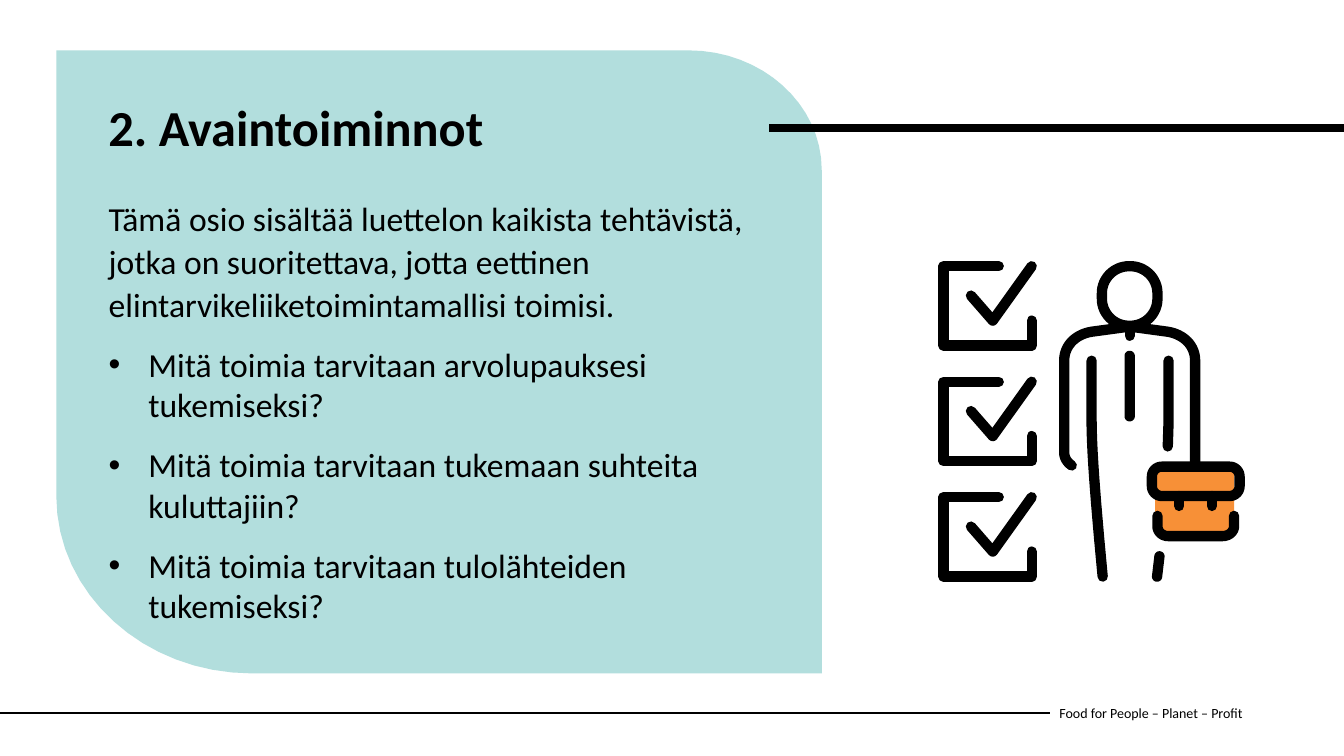
import math

from pptx import Presentation
from pptx.dml.color import RGBColor
from pptx.enum.shapes import MSO_CONNECTOR, MSO_SHAPE
from pptx.enum.text import MSO_ANCHOR, PP_ALIGN
from pptx.oxml.ns import qn
from pptx.util import Cm, Pt
from lxml import etree

BLACK = RGBColor(0x00, 0x00, 0x00)
TEAL = RGBColor(0xB2, 0xDE, 0xDD)
ORANGE = RGBColor(0xF7, 0x90, 0x37)
RECTANGLE = MSO_SHAPE.RECTANGLE
STRAIGHT = MSO_CONNECTOR.STRAIGHT
LEFT = PP_ALIGN.LEFT
TOP = MSO_ANCHOR.TOP
MIDDLE = MSO_ANCHOR.MIDDLE

FONT = "Calibri"
STROKE = 0.26
CURVE_STEPS = 16
CHECK_PITCH = 2.91
BODY_AXIS = 28.47

INTRO = (
    "Tämä osio sisältää luettelon kaikista tehtävistä, jotka on suoritettava, "
    "jotta eettinen elintarvikeliiketoimintamallisi toimisi."
)
QUESTIONS = (
    "Mitä toimia tarvitaan arvolupauksesi tukemiseksi?",
    "Mitä toimia tarvitaan tukemaan suhteita kuluttajiin?",
    "Mitä toimia tarvitaan tulolähteiden tukemiseksi?",
)

CARD = (
    (20.71, 16.97), (6.35, 16.97), (3.63, 16.97, 1.42, 14.96, 1.42, 12.5),
    (1.42, 1.27), (17.35, 1.27), (19.2, 1.27, 20.71, 2.62, 20.71, 4.29),
)
CHECK_MARK = ((24.47, 7.45), (25.02, 8.08), (26, 6.71))
CHECK_BOX = ((26, 8.08), (26, 8.71), (23.78, 8.71), (23.78, 6.71), (25.17, 6.71))
SHOULDER = ((BODY_AXIS, 8.23), (27.51, 8.36), (27.1, 8.43, 26.82, 8.71, 26.82, 9.09))
HAND = ((26.82, 11.4), (26.82, 11.54, 26.9, 11.66, 27.01, 11.73))
LEFT_LEG = ((27.51, 9.09), (27.51, 10.62), (27.51, 11.74, 27.79, 14.5, 27.79, 14.53))
RIGHT_SIDE = ((29.45, 9.09), (29.45, 10.62), (29.43, 11.25))
CASE_BOTTOM = (
    (29.17, 13), (29.17, 13.26), (29.17, 13.4, 29.29, 13.51, 29.44, 13.51),
    (30.81, 13.51), (30.97, 13.51, 31.1, 13.4, 31.1, 13.26), (31.1, 13),
)
TIE_KNOT = ((BODY_AXIS, 8.36), (BODY_AXIS, 8.46))
BUCKLES = (((29.72, 12.5), (29.72, 12.75)), ((30.54, 12.5), (30.54, 12.75)))
SHIRT_FRONT = ((BODY_AXIS, 8.97), (BODY_AXIS, 10.49))
RIGHT_LEG = ((29.22, 14.02), (29.16, 14.53))


def flatten(segments):
    """Turn points and six-number cubic curves into a list of points."""
    points = []
    for segment in segments:
        if len(segment) == 2:
            points.append(segment)
            continue
        corners = [points[-1], segment[:2], segment[2:4], segment[4:]]
        for step in range(1, CURVE_STEPS + 1):
            t = step / CURVE_STEPS
            weights = ((1 - t) ** 3, 3 * t * (1 - t) ** 2, 3 * t * t * (1 - t), t ** 3)
            points.append(tuple(
                sum(weight * corner[axis] for weight, corner in zip(weights, corners))
                for axis in (0, 1)
            ))
    return points


def shift(segments, distance):
    """Move segments down."""
    return [(x, y + distance) for x, y in segments]


def mirror(segments):
    """Reflect segments across the axis of the figure."""
    return [
        tuple(value if index % 2 else 2 * BODY_AXIS - value
              for index, value in enumerate(segment))
        for segment in segments
    ]


def arc(x, y, radius, start):
    """Return the points of a half circle that begins at an angle."""
    angles = [start + math.pi * step / CURVE_STEPS for step in range(CURVE_STEPS + 1)]
    return [(x + radius * math.cos(angle), y + radius * math.sin(angle)) for angle in angles]


def capsule(start, end):
    """Return the outline of a straight stroke with round ends."""
    turn = math.atan2(end[1] - start[1], end[0] - start[0]) + math.pi / 2
    return arc(*start, STROKE / 2, turn) + arc(*end, STROKE / 2, turn + math.pi)


def rounded_loop(left, top, width, height, radius):
    """Return a closed rounded rectangle as segments."""
    right, bottom, bend = left + width, top + height, radius * 0.45
    return [
        (left + radius, top), (right - radius, top),
        (right - bend, top, right, top + bend, right, top + radius),
        (right, bottom - radius),
        (right, bottom - bend, right - bend, bottom, right - radius, bottom),
        (left + radius, bottom),
        (left + bend, bottom, left, bottom - bend, left, bottom - radius),
        (left, top + radius), (left, top + bend, left + bend, top, left + radius, top),
    ]


def draw_line(shape, width, join="round"):
    """Give a shape or connector a black line."""
    shape.line.color.rgb = BLACK
    shape.line.width = width
    line = shape._element.spPr.find(qn("a:ln"))
    line.set("cap", "rnd" if join == "round" else "flat")
    etree.SubElement(line, qn("a:" + join))


def paint(shape, fill=None, width=None, join="round"):
    """Set the fill and the outline."""
    shape.shadow.inherit = False
    if fill is None:
        shape.fill.background()
    else:
        shape.fill.solid()
        shape.fill.fore_color.rgb = fill
    if width is None:
        shape.line.fill.background()
    else:
        draw_line(shape, width, join)


def add_outline(slide, *contours, closed=False, **look):
    """Draw one freeform with a contour for each list of segments."""
    builder = None
    for contour in contours:
        points = [(Cm(x), Cm(y)) for x, y in flatten(contour)]
        if builder is None:
            builder = slide.shapes.build_freeform(*points[0], scale=1.0)
        else:
            builder.move_to(*points[0])
        builder.add_line_segments(points[1:], close=closed)
    paint(builder.convert_to_shape(), **look)


def add_block(slide, box, **look):
    """Draw a rectangle."""
    paint(slide.shapes.add_shape(RECTANGLE, *map(Cm, box)), **look)


def place_text(shape, box, anchor=TOP):
    """Position a text shape and return its frame."""
    shape.left, shape.top, shape.width, shape.height = map(Cm, box)
    frame = shape.text_frame
    frame.word_wrap = True
    frame.vertical_anchor = anchor
    return frame


def write(paragraph, text, size=24, bold=False, spacing=1.0, before=0, after=0, bullet=False):
    """Write one formatted paragraph."""
    paragraph.alignment = LEFT
    paragraph.line_spacing = spacing
    paragraph.space_before, paragraph.space_after = Pt(before), Pt(after)
    run = paragraph.add_run()
    run.text = text
    run.font.name, run.font.size, run.font.bold = FONT, Pt(size), bold
    run.font.color.rgb = BLACK
    if bullet:
        properties = paragraph._p.get_or_add_pPr()
        properties.set("marL", str(Cm(1)))
        properties.set("indent", str(-Cm(1)))
        etree.SubElement(properties, qn("a:buFont")).set("typeface", "Arial")
        etree.SubElement(properties, qn("a:buChar")).set("char", "•")


def draw_worker(slide):
    """Draw the checklist and the worker with a briefcase."""
    add_block(slide, (29.11, 11.81, 1.99, 1.6), fill=ORANGE)
    strokes = [
        shift(part, row * CHECK_PITCH) for row in range(3) for part in (CHECK_MARK, CHECK_BOX)
    ]
    for stroke in strokes + [LEFT_LEG, RIGHT_SIDE, CASE_BOTTOM]:
        add_outline(slide, stroke, width=Cm(STROKE))
    head = rounded_loop(27.77, 6.71, 1.4, 1.5, 0.68)
    lid = rounded_loop(29.03, 11.76, 2.21, 0.74, 0.25)
    arms = (SHOULDER + HAND, mirror(SHOULDER) + [(30.12, 11.76)])
    add_outline(slide, head, *arms, TIE_KNOT, lid, *BUCKLES, width=Cm(STROKE))
    for ends in (SHIRT_FRONT, RIGHT_LEG):
        add_outline(slide, capsule(*ends), closed=True, fill=BLACK)


def main():
    """Build the slide and save it."""
    presentation = Presentation()
    presentation.slide_width, presentation.slide_height = Cm(33.87), Cm(19.05)
    slide = presentation.slides.add_slide(presentation.slide_layouts[5])

    footer = place_text(slide.shapes.add_textbox(0, 0, 0, 0), (26.45, 17.45, 6.93, 1.02), MIDDLE)
    write(footer.paragraphs[0], "Food for People – Planet – Profit", size=10)
    rule = slide.shapes.add_connector(STRAIGHT, *map(Cm, (0, 17.96, 26.45, 17.96)))
    draw_line(rule, Pt(1.5), join="miter")
    etree.SubElement(rule._element.spPr, qn("a:effectLst"))
    add_outline(slide, CARD, closed=True, fill=TEAL)
    add_block(slide, (19.41, 3.16, 14.45, 0.13), fill=BLACK, width=Pt(1.93), join="miter")

    body = place_text(slide.shapes.add_textbox(0, 0, 0, 0), (2.49, 4.79, 17.68, 10.8))
    write(body.paragraphs[0], INTRO, spacing=1.07, before=10, after=8)
    for question in QUESTIONS:
        write(body.add_paragraph(), question, before=6, after=8, bullet=True)

    title = slide.shapes.title
    frame = place_text(title, (2.48, 2.46, 13.87, 2.77))
    write(frame.paragraphs[0], "2. Avaintoiminnot", size=36, bold=True, spacing=0.9, before=10)
    title._element.getparent().append(title._element)

    draw_worker(slide)
    presentation.save("out.pptx")


if __name__ == "__main__":
    main()
